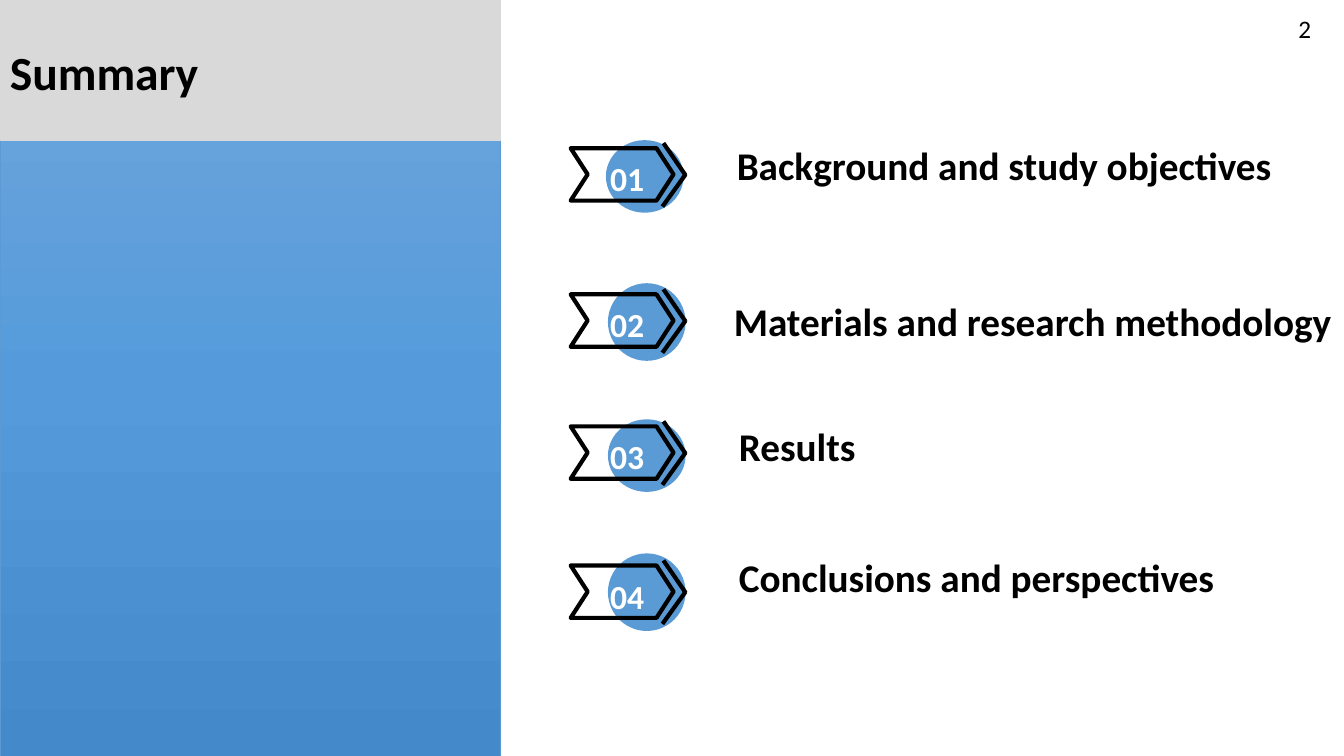
from dataclasses import dataclass

from lxml.etree import SubElement
from pptx import Presentation
from pptx.dml.color import RGBColor
from pptx.enum.shapes import MSO_CONNECTOR as Connector, MSO_SHAPE as Preset
from pptx.enum.text import MSO_ANCHOR as Anchor, PP_ALIGN as Align
from pptx.oxml.ns import qn
from pptx.shapes.autoshape import Shape
from pptx.slide import Slide
from pptx.util import Inches, Pt

BLACK = RGBColor(0x00, 0x00, 0x00)
WHITE = RGBColor(0xFF, 0xFF, 0xFF)
GREY = RGBColor(0xD9, 0xD9, 0xD9)
BLUE = RGBColor(0x5B, 0x9B, 0xD5)
BLUE_TOP = RGBColor(0x71, 0xA6, 0xDB)
BLUE_MIDDLE = RGBColor(0x55, 0x9B, 0xDB)
BLUE_BOTTOM = RGBColor(0x44, 0x8A, 0xCA)

PANEL_WIDTH = 4.96
ARROW_LEFT = 5.66
ARROW_TIP = 6.8


@dataclass(frozen=True)
class Box:
    left: float
    top: float
    width: float
    height: float

    def emu(self) -> list[int]:
        return [Inches(n) for n in (self.left, self.top, self.width, self.height)]


@dataclass(frozen=True)
class Chapter:
    title: str
    title_box: Box
    arrow_top: float
    disc: Box


CHAPTERS = [
    Chapter("Background and study objectives", Box(7.21, 1.48, 6.73, 0.37),
            1.47, Box(6.01, 1.39, 0.77, 0.72)),
    Chapter("Materials and research methodology", Box(7.18, 3.03, 6.73, 0.37),
            2.92, Box(6.03, 2.81, 0.77, 0.77)),
    Chapter("Results", Box(7.23, 4.18, 9.39, 0.55),
            4.23, Box(6.03, 4.16, 0.77, 0.72)),
    Chapter("Conclusions and perspectives", Box(7.23, 5.45, 5.18, 0.6),
            5.61, Box(6.03, 5.49, 0.77, 0.77)),
]


def add_text(slide: Slide, text: str, box: Box, *, size: float,
             color: RGBColor = BLACK, bold: bool = True,
             align: Align = Align.LEFT, anchor: Anchor = Anchor.MIDDLE,
             spacing: float = 0.9) -> None:
    frame = slide.shapes.add_textbox(*box.emu()).text_frame
    frame.word_wrap = True
    frame.vertical_anchor = anchor
    paragraph = frame.paragraphs[0]
    paragraph.alignment = align
    paragraph.line_spacing = spacing
    run = paragraph.add_run()
    run.text = text
    run.font.name = "Calibri"
    run.font.size = Pt(size)
    run.font.bold = bold
    run.font.color.rgb = color


def add_figure(slide: Slide, preset: Preset, box: Box, *,
               fill: RGBColor | None = None, line: RGBColor | None = None,
               line_width: float = 0) -> Shape:
    figure = slide.shapes.add_shape(preset, *box.emu())
    figure.shadow.inherit = False
    if fill is None:
        figure.fill.background()
    else:
        figure.fill.solid()
        figure.fill.fore_color.rgb = fill
    if line is None:
        figure.line.fill.background()
    else:
        figure.line.color.rgb = line
        figure.line.width = Pt(line_width)
    return figure


def add_stroke(slide: Slide, x1: float, y1: float, x2: float, y2: float) -> None:
    stroke = slide.shapes.add_connector(
        Connector.STRAIGHT, Inches(x1), Inches(y1), Inches(x2), Inches(y2))
    stroke.line.color.rgb = BLACK
    stroke.line.width = Pt(3)
    SubElement(stroke.element.spPr, qn("a:effectLst"))


def add_chapter(slide: Slide, number: int, chapter: Chapter) -> None:
    top = chapter.arrow_top
    add_figure(slide, Preset.OVAL, chapter.disc, fill=BLUE)
    arrow = add_figure(slide, Preset.CHEVRON, Box(ARROW_LEFT, top, 1.02, 0.52),
                       line=BLACK, line_width=3)
    arrow.adjustments[0] = 0.324
    add_text(slide, f"{number:02}", Box(5.93, top + 0.05, 0.58, 0.5), size=24,
             color=WHITE, align=Align.CENTER, anchor=Anchor.TOP, spacing=1)
    add_stroke(slide, 6.58, top - 0.05, ARROW_TIP, top + 0.27)
    add_stroke(slide, ARROW_TIP, top + 0.26, 6.57, top + 0.58)
    add_text(slide, chapter.title, chapter.title_box, size=28)


def add_side_panel(slide: Slide) -> None:
    panel = add_figure(slide, Preset.RECTANGLE, Box(0, 0, PANEL_WIDTH, 7.5),
                       line=BLUE, line_width=0.5)
    panel.fill.gradient()
    panel.fill.gradient_angle = 270
    stops = panel.fill.gradient_stops
    stops[0].color.rgb, stops[0].position = BLUE_TOP, 0
    stops[1].color.rgb, stops[1].position = BLUE_BOTTOM, 1
    stop_list = panel.element.spPr.find(qn("a:gradFill")).find(qn("a:gsLst"))
    middle = SubElement(stop_list, qn("a:gs"), pos="50000")
    SubElement(middle, qn("a:srgbClr"), val=str(BLUE_MIDDLE))
    stop_list.insert(1, middle)
    add_figure(slide, Preset.RECTANGLE, Box(0, -0.01, PANEL_WIDTH, 1.4),
               fill=GREY, line=GREY, line_width=0.25)


def main() -> None:
    deck = Presentation()
    deck.slide_width = Inches(13.33)
    deck.slide_height = Inches(7.5)
    slide = deck.slides.add_slide(deck.slide_layouts[6])
    for number, chapter in enumerate(CHAPTERS, start=1):
        add_chapter(slide, number, chapter)
    add_side_panel(slide)
    add_text(slide, "Summary", Box(0, 0.33, 11.91, 0.84), size=34)
    add_text(slide, "2", Box(12.78, 0.08, 0.55, 0.4), size=18, bold=False,
             anchor=Anchor.TOP, spacing=1)
    deck.save("out.pptx")


if __name__ == "__main__":
    main()
